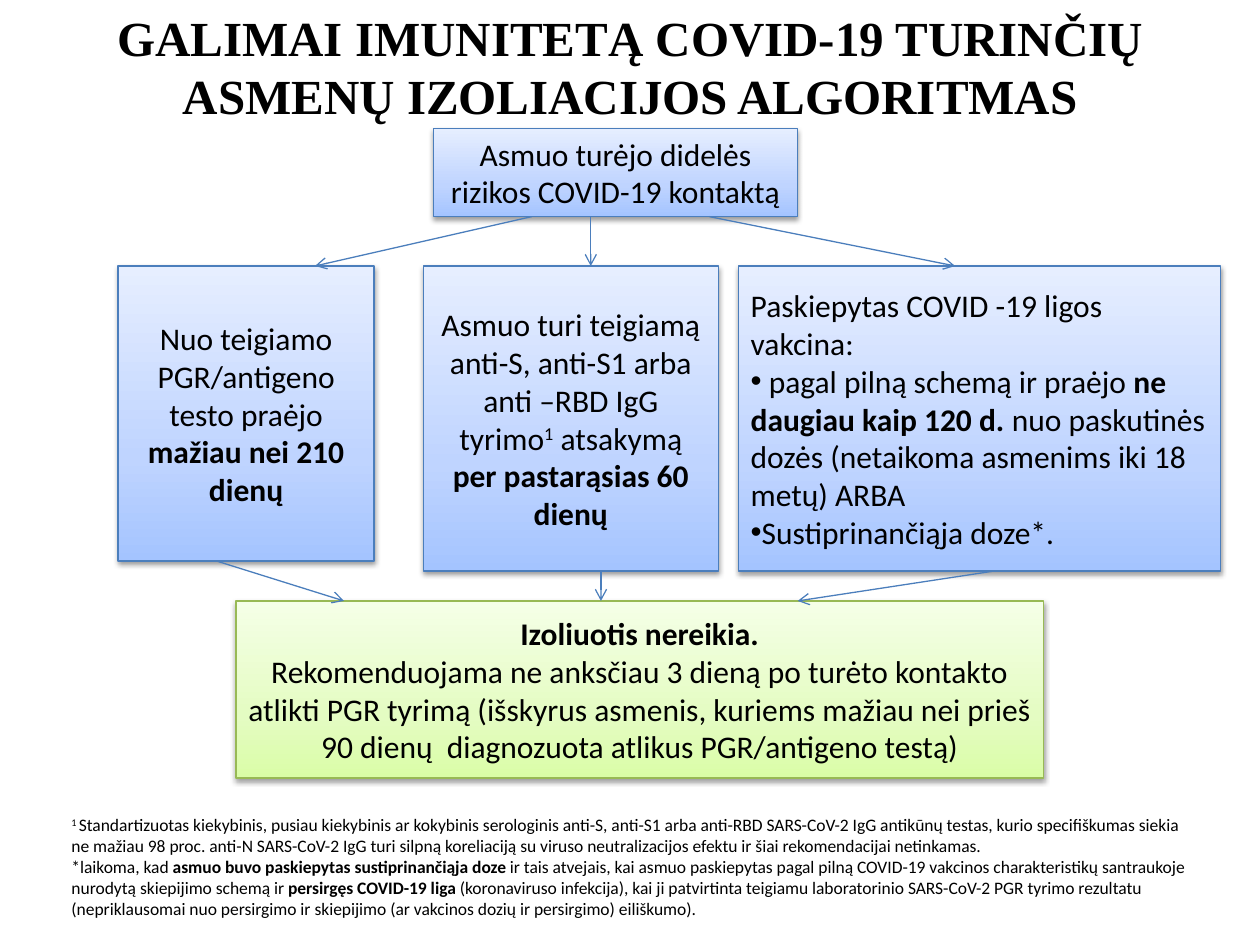
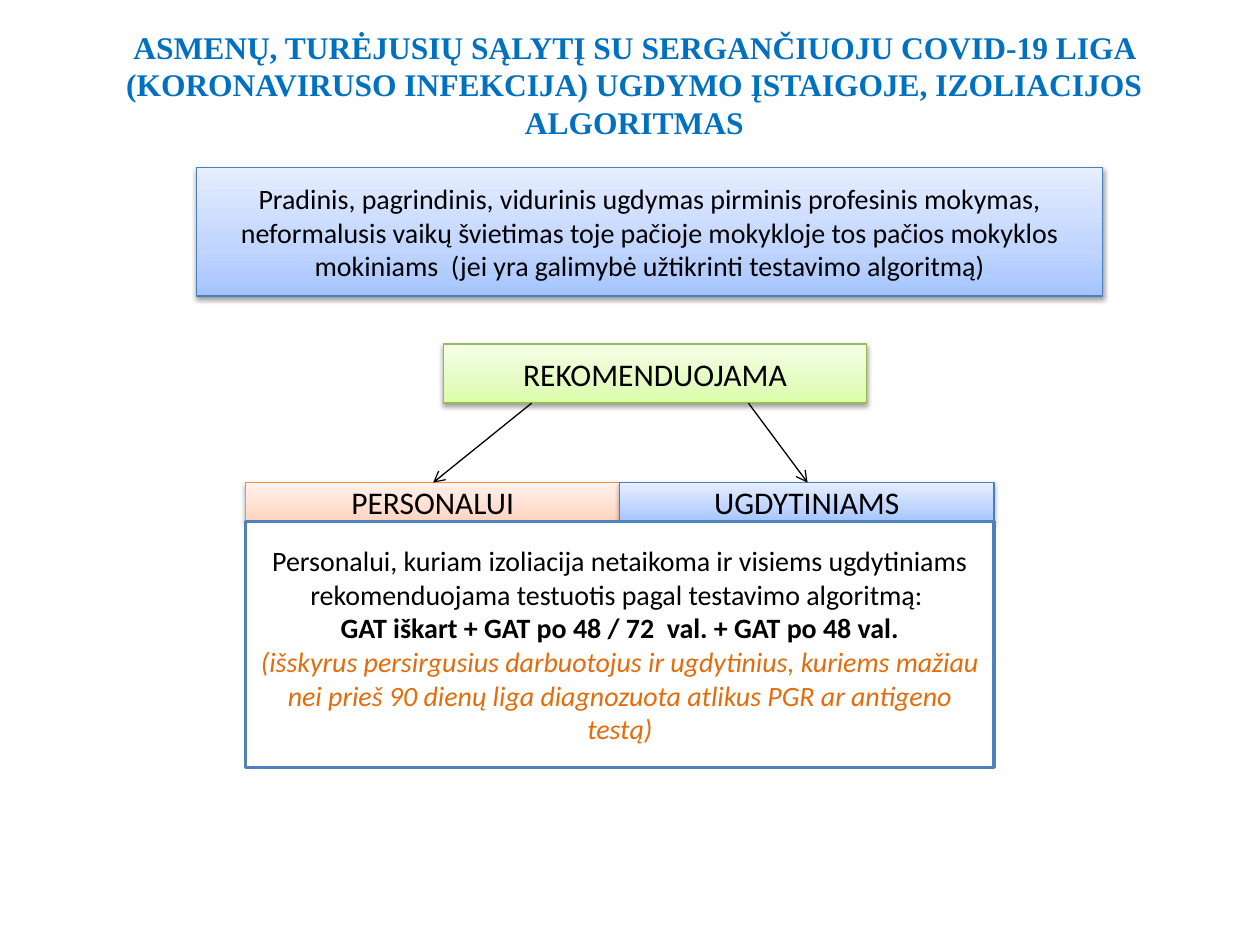
from dataclasses import dataclass

from lxml import etree
from pptx import Presentation
from pptx.dml.color import RGBColor
from pptx.enum.shapes import MSO_CONNECTOR, MSO_SHAPE
from pptx.enum.text import MSO_ANCHOR, MSO_AUTO_SIZE, PP_ALIGN
from pptx.oxml.ns import qn
from pptx.shapes.autoshape import Shape
from pptx.slide import Slide
from pptx.text.text import TextFrame
from pptx.util import Pt

RECTANGLE = MSO_SHAPE.RECTANGLE
STRAIGHT = MSO_CONNECTOR.STRAIGHT
MIDDLE = MSO_ANCHOR.MIDDLE
NO_AUTOFIT = MSO_AUTO_SIZE.NONE
CENTER, LEFT = PP_ALIGN.CENTER, PP_ALIGN.LEFT

BODY_FONT = "Calibri"
TITLE_FONT = "Times New Roman"
TITLE_ONLY_LAYOUT = 5
THIN_LINE = 0.75

BLACK = RGBColor(0x00, 0x00, 0x00)
WHITE = RGBColor(0xFF, 0xFF, 0xFF)
TITLE_BLUE = RGBColor(0x00, 0x70, 0xC0)
FRAME_BLUE = RGBColor(0x4F, 0x81, 0xBD)
LINE_BLUE = RGBColor(0x4B, 0x7E, 0xBC)
LINE_GREEN = RGBColor(0x98, 0xB9, 0x55)
LINE_ORANGE = RGBColor(0xF6, 0x92, 0x40)
NOTE_ORANGE = RGBColor(0xE4, 0x6C, 0x0A)


@dataclass(frozen=True)
class Theme:
    """Gradient colours from bottom to top, and the outline colour."""
    stops: tuple[RGBColor, RGBColor, RGBColor]
    line: RGBColor


BLUE = Theme((RGBColor(0xA4, 0xC4, 0xFF), RGBColor(0xBF, 0xD4, 0xFF),
              RGBColor(0xE6, 0xEE, 0xFF)), LINE_BLUE)
GREEN = Theme((RGBColor(0xDA, 0xFD, 0xA7), RGBColor(0xE4, 0xFC, 0xC2),
               RGBColor(0xF5, 0xFF, 0xE7)), LINE_GREEN)
ORANGE = Theme((RGBColor(0xFF, 0xD2, 0xBD), RGBColor(0xFF, 0xDE, 0xD0),
                RGBColor(0xFF, 0xF2, 0xED)), LINE_ORANGE)
STOP_POSITIONS = (0, 35, 100)


@dataclass(frozen=True)
class Span:
    text: str
    bold: bool = False
    italic: bool = False
    superscript: bool = False
    color: RGBColor = BLACK


@dataclass(frozen=True)
class Line:
    spans: tuple[Span, ...]
    bullet: bool = False


def line(*parts: str | Span, bullet: bool = False) -> Line:
    spans = tuple(Span(part) if isinstance(part, str) else part for part in parts)
    return Line(spans, bullet)


def bold(text: str) -> Span:
    return Span(text, bold=True)


def superscript(text: str) -> Span:
    return Span(text, superscript=True)


@dataclass(frozen=True)
class Box:
    left: float
    top: float
    width: float
    height: float
    lines: tuple[Line, ...]
    theme: Theme | None = BLUE
    size: float = 18
    align: PP_ALIGN = CENTER

    @property
    def bottom(self) -> float:
        return self.top + self.height

    @property
    def frame(self) -> tuple[Pt, Pt, Pt, Pt]:
        return Pt(self.left), Pt(self.top), Pt(self.width), Pt(self.height)


def write_lines(text_frame: TextFrame, box: Box) -> None:
    text_frame.word_wrap = True
    for index, content in enumerate(box.lines):
        paragraph = text_frame.paragraphs[0] if index == 0 else text_frame.add_paragraph()
        paragraph.alignment = box.align
        if content.bullet:
            properties = paragraph._p.get_or_add_pPr()
            properties.set("marL", "0")
            properties.set("indent", "0")
            etree.SubElement(properties, qn("a:buFont"), typeface="Arial")
            etree.SubElement(properties, qn("a:buChar"), char="•")
        for span in content.spans:
            run = paragraph.add_run()
            run.text = span.text
            run.font.name = BODY_FONT
            run.font.size = Pt(box.size)
            run.font.bold = span.bold
            run.font.italic = span.italic
            run.font.color.rgb = span.color
            if span.superscript:
                run._r.get_or_add_rPr().set("baseline", "30000")


def apply_theme(shape: Shape, theme: Theme) -> None:
    shape.fill.gradient()
    shape.fill.gradient_angle = 90
    properties = shape._element.spPr
    stop_list = properties.find(qn("a:gradFill")).find(qn("a:gsLst"))
    stop_list.clear()
    for position, color in zip(STOP_POSITIONS, theme.stops):
        stop = etree.SubElement(stop_list, qn("a:gs"), pos=str(position * 1000))
        etree.SubElement(stop, qn("a:srgbClr"), val=str(color))
    shape.line.color.rgb = theme.line
    shape.line.width = Pt(THIN_LINE)

    shadow = etree.SubElement(
        properties.find(qn("a:effectLst")), qn("a:outerShdw"),
        blurRad=str(Pt(3.1)), dist=str(Pt(1.6)), dir="5400000", rotWithShape="0")
    shadow_color = etree.SubElement(shadow, qn("a:srgbClr"), val=str(BLACK))
    etree.SubElement(shadow_color, qn("a:alpha"), val="38000")


def draw_box(slide: Slide, box: Box) -> None:
    """Draw a gradient box, or a white framed one if it has no theme."""
    shape = slide.shapes.add_shape(RECTANGLE, *box.frame)
    shape.shadow.inherit = False
    if box.theme:
        apply_theme(shape, box.theme)
    else:
        shape.fill.solid()
        shape.fill.fore_color.rgb = WHITE
        shape.line.color.rgb = FRAME_BLUE
        shape.line.width = Pt(2)
    shape.text_frame.vertical_anchor = MIDDLE
    write_lines(shape.text_frame, box)


def draw_arrow(slide: Slide, source: Box, target: Box, start_x: float, end_x: float,
               color: RGBColor = LINE_BLUE) -> None:
    """Point from the bottom edge of one box to the top edge of another."""
    arrow = slide.shapes.add_connector(
        STRAIGHT, Pt(start_x), Pt(source.bottom), Pt(end_x), Pt(target.top))
    arrow.line.color.rgb = color
    arrow.line.width = Pt(THIN_LINE)
    etree.SubElement(arrow.line._get_or_add_ln(), qn("a:tailEnd"), type="arrow")
    etree.SubElement(arrow._element.spPr, qn("a:effectLst"))


def add_titled_slide(presentation: Presentation, text: str,
                     frame: tuple[float, float, float, float], size: float,
                     color: RGBColor, bottom_margin: float = 3.6) -> Slide:
    slide = presentation.slides.add_slide(presentation.slide_layouts[TITLE_ONLY_LAYOUT])
    title = slide.shapes.title
    title.left, title.top, title.width, title.height = map(Pt, frame)
    text_frame = title.text_frame
    text_frame.text = text
    text_frame.word_wrap = True
    text_frame.auto_size = NO_AUTOFIT
    text_frame.vertical_anchor = MIDDLE
    text_frame.margin_bottom = Pt(bottom_margin)
    paragraph = text_frame.paragraphs[0]
    paragraph.alignment = CENTER
    font = paragraph.runs[0].font
    font.name, font.size, font.bold = TITLE_FONT, Pt(size), True
    font.color.rgb = color
    return slide


def add_immunity_slide(presentation: Presentation) -> None:
    slide = add_titled_slide(
        presentation, "GALIMAI IMUNITETĄ COVID-19 TURINČIŲ ASMENŲ IZOLIACIJOS ALGORITMAS",
        (36, 21.6, 648, 62.6), 28, BLACK, bottom_margin=34)

    row_top = 152
    contact = Box(247.7, 73.4, 208.1, 50.4,
                  (line("Asmuo turėjo didelės rizikos COVID-19 kontaktą"),))
    recovered = Box(67.5, row_top, 146.3, 168.6, (
        line("Nuo teigiamo PGR/antigeno testo praėjo ", bold("mažiau nei 210 dienų")),))
    antibodies = Box(241.9, row_top, 168.6, 174.3, (
        line("Asmuo turi teigiamą anti-S, anti-S1 arba anti –RBD IgG tyrimo",
             superscript("1"), " atsakymą ", bold("per pastarąsias 60 dienų")),))
    vaccinated = Box(421.9, row_top, 275.6, 174.3, (
        line("Paskiepytas COVID -19 ligos vakcina:"),
        line(" pagal pilną schemą ir praėjo ", bold("ne daugiau kaip 120 d."),
             " nuo paskutinės dozės (netaikoma asmenims iki 18 metų) ARBA", bullet=True),
        line("Sustiprinančiąja doze*.", bullet=True)), align=LEFT)
    no_isolation = Box(134.8, 343.4, 461.5, 101.3, (
        line(bold("Izoliuotis nereikia.")),
        line("Rekomenduojama ne anksčiau 3 dieną po turėto kontakto atlikti PGR tyrimą "
             "(išskyrus asmenis, kuriems mažiau nei prieš 90 dienų  diagnozuota atlikus "
             "PGR/antigeno testą)")), theme=GREEN)
    for box in (contact, recovered, antibodies, vaccinated, no_isolation):
        draw_box(slide, box)

    for condition, start_x, end_x in ((recovered, 303.8, 180), (vaccinated, 405.4, 545.8),
                                      (antibodies, 337.6, 337.6)):
        draw_arrow(slide, contact, condition, start_x, end_x)
    for condition, start_x, end_x in ((recovered, 123.8, 196.6), (vaccinated, 568.1, 455.8),
                                      (antibodies, 343.4, 343.4)):
        draw_arrow(slide, condition, no_isolation, start_x, end_x)

    footnotes = Box(33.8, 461.5, 658.1, 67.7, (
        line(superscript("1 "),
             "Standartizuotas kiekybinis, pusiau kiekybinis ar kokybinis serologinis anti-S, "
             "anti-S1 arba anti-RBD SARS-CoV-2 IgG antikūnų testas, kurio specifiškumas siekia "
             "ne mažiau 98 proc. anti-N SARS-CoV-2 IgG turi silpną koreliaciją su viruso "
             "neutralizacijos efektu ir šiai rekomendacijai netinkamas."),
        line("*laikoma, kad ", bold("asmuo buvo paskiepytas sustiprinančiąja doze "),
             "ir tais atvejais, kai asmuo paskiepytas pagal pilną COVID-19 vakcinos "
             "charakteristikų santraukoje nurodytą skiepijimo schemą ir ",
             bold("persirgęs COVID-19 liga "),
             "(koronaviruso infekcija), kai ji patvirtinta teigiamu laboratorinio SARS-CoV-2 "
             "PGR tyrimo rezultatu (nepriklausomai nuo persirgimo ir skiepijimo (ar vakcinos "
             "dozių ir persirgimo) eiliškumo).")), size=10, align=LEFT)
    write_lines(slide.shapes.add_textbox(*footnotes.frame).text_frame, footnotes)


def add_school_slide(presentation: Presentation) -> None:
    slide = add_titled_slide(
        presentation, "ASMENŲ, TURĖJUSIŲ SĄLYTĮ SU SERGANČIUOJU COVID-19 LIGA "
        "(KORONAVIRUSO INFEKCIJA) UGDYMO ĮSTAIGOJE, IZOLIACIJOS ALGORITMAS",
        (22.3, 11.5, 680.4, 73.4), 18, TITLE_BLUE)

    left, half_width, header_top, header_height = 140.4, 213.8, 275.8, 22.3
    education = Box(112.4, 95.8, 517.7, 73.4, (
        line("Pradinis, pagrindinis, vidurinis ugdymas pirminis profesinis mokymas, "
             "neformalusis vaikų švietimas toje pačioje mokykloje tos pačios mokyklos "
             "mokiniams  (jei yra galimybė užtikrinti testavimo algoritmą)"),), size=16)
    recommended = Box(253.4, 196.6, 241.9, 33.8, (line("REKOMENDUOJAMA"),), theme=GREEN)
    staff = Box(left, header_top, half_width, header_height, (line("PERSONALUI"),),
                theme=ORANGE)
    pupils = Box(left + half_width, header_top, half_width, header_height,
                 (line("UGDYTINIAMS"),))
    testing = Box(left, staff.bottom, 2 * half_width, 140.4, (
        line("Personalui, kuriam izoliacija netaikoma ir visiems ugdytiniams "
             "rekomenduojama testuotis pagal testavimo algoritmą: "),
        line(bold("GAT iškart + GAT po 48 / 72  val. + GAT po 48 val.")),
        line(Span("(išskyrus persirgusius darbuotojus ir ugdytinius, kuriems mažiau nei prieš "
                  "90 dienų liga diagnozuota atlikus PGR ar antigeno testą)",
                  italic=True, color=NOTE_ORANGE))), theme=None, size=16)
    for box in (education, recommended, staff, pupils, testing):
        draw_box(slide, box)

    draw_arrow(slide, recommended, staff, 303.8, 247.5, BLACK)
    draw_arrow(slide, recommended, pupils, 427.7, 461.5, BLACK)


def main() -> None:
    presentation = Presentation()
    presentation.slide_width, presentation.slide_height = Pt(720), Pt(540)
    add_immunity_slide(presentation)
    add_school_slide(presentation)
    presentation.save("out.pptx")


if __name__ == "__main__":
    main()
